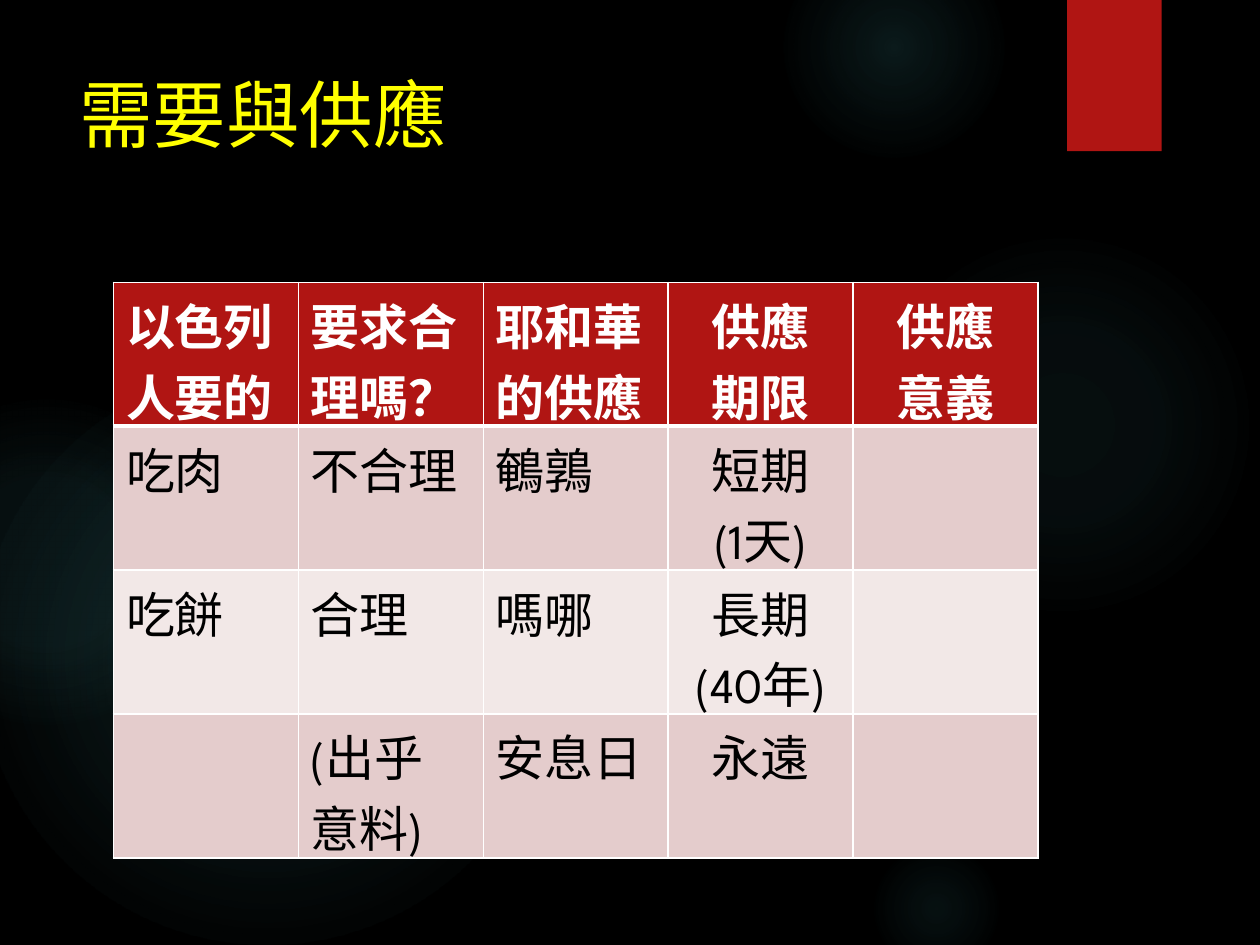
from lxml.etree import SubElement
from pptx import Presentation
from pptx.dml.color import RGBColor
from pptx.enum.shapes import MSO_SHAPE
from pptx.enum.text import PP_ALIGN
from pptx.oxml import parse_xml
from pptx.oxml.ns import nsdecls, qn
from pptx.util import Inches, Pt

COLORS = {"night": "000000", "glow": "50B9C1", "red": "B01513", "title": "FFFF00",
          "white": "FFFFFF", "rose": "E4CCCC", "pale": "F2E8E7"}
FONT = "League Spartan"


def rgb(name):
    return RGBColor.from_string(COLORS[name])


def style_text(frame, size, color, bold=False, align=PP_ALIGN.LEFT):
    for paragraph in frame.paragraphs:
        paragraph.alignment = align
        for run in paragraph.runs:
            run.font.name = FONT
            run.font.size = Pt(size)
            run.font.bold = bold
            run.font.color.rgb = rgb(color)


prs = Presentation()
prs.slide_width, prs.slide_height = Inches(10), Inches(7.5)
slide = prs.slides.add_slide(prs.slide_layouts[6])
slide.background.fill.solid()
slide.background.fill.fore_color.rgb = rgb("night")

# Soft glows: left, top, diameter, then (position, opacity) stops in percent
glows = [
    (6.89, 1.83, 3.08, [(0, 7), (36, 6), (69, 0)]),
    (6.22, -0.5, 1.75, [(0, 14), (36, 7), (73, 0)]),
    (6.89, 6.67, 1.08, [(0, 9), (36, 5), (66, 0)]),
    (-0.17, 2.92, 4.58, [(0, 11), (36, 10), (75, 0)]),
    (-0.92, 3.17, 2.58, [(0, 8), (36, 8), (72, 0)]),
]
for left, top, diameter, stops in glows:
    glow = slide.shapes.add_shape(MSO_SHAPE.OVAL, Inches(left), Inches(top),
                                  Inches(diameter), Inches(diameter))
    glow.shadow.inherit = False
    glow.line.fill.background()
    stop_xml = "".join(
        f'<a:gs pos="{position * 1000}"><a:srgbClr val="{COLORS["glow"]}">'
        f'<a:alpha val="{opacity * 1000}"/></a:srgbClr></a:gs>'
        for position, opacity in stops)
    gradient = parse_xml(
        f'<a:gradFill {nsdecls("a")} rotWithShape="1"><a:gsLst>{stop_xml}</a:gsLst>'
        '<a:path path="circle"><a:fillToRect l="50000" t="50000" r="50000" b="50000"/>'
        '</a:path></a:gradFill>')
    glow.element.spPr.find(qn("a:prstGeom")).addnext(gradient)

ribbon = slide.shapes.add_shape(MSO_SHAPE.RECTANGLE, Inches(8.47), 0, Inches(0.75), Inches(1.2))
ribbon.fill.solid()
ribbon.fill.fore_color.rgb = rgb("red")
ribbon.line.fill.background()
ribbon.shadow.inherit = False
ribbon.element.spPr.find(qn("a:effectLst")).append(parse_xml(
    f'<a:outerShdw {nsdecls("a")} blurRad="{Pt(3)}" dist="{Pt(2)}" dir="5400000" rotWithShape="0">'
    f'<a:srgbClr val="{COLORS["night"]}"><a:alpha val="45000"/></a:srgbClr></a:outerShdw>'))

title = slide.shapes.add_textbox(Inches(0.53), Inches(0.5), Inches(7.72), Inches(1.53)).text_frame
title.word_wrap = True
title.text = "需要與供應"
style_text(title, 42, "title")

supply_rows = [
    ["以色列人要的", "要求合理嗎？", "耶和華的供應", "供應\n期限", "供應\n意義"],
    ["吃肉", "不合理", "鵪鶉", "短期\n(1天)", ""],
    ["吃餅", "合理", "嗎哪", "長期\n(40年)", ""],
    ["", "(出乎\n意料)", "安息日", "永遠", ""],
]
row_fills = ["red", "rose", "pale", "rose"]
first_centered_column = 3
table = slide.shapes.add_table(len(supply_rows), len(supply_rows[0]), Inches(0.9), Inches(2.24),
                               Inches(7.34), Inches(4.57)).table

for r, row in enumerate(supply_rows):
    header = r == 0
    for c, words in enumerate(row):
        cell = table.cell(r, c)
        cell.text_frame.text = words
        style_text(cell.text_frame, 28, "white" if header else "night", header,
                   PP_ALIGN.CENTER if c >= first_centered_column else PP_ALIGN.LEFT)
        edge_widths = {"lnL": 1, "lnR": 1, "lnT": 3 if r == 1 else 1, "lnB": 3 if header else 1}
        for edge, width in edge_widths.items():
            border = SubElement(cell._tc.get_or_add_tcPr(), qn(f"a:{edge}"), w=str(Pt(width)))
            SubElement(SubElement(border, qn("a:solidFill")), qn("a:srgbClr"), val=COLORS["white"])
        cell.fill.solid()
        cell.fill.fore_color.rgb = rgb(row_fills[r])

prs.save("out.pptx")
